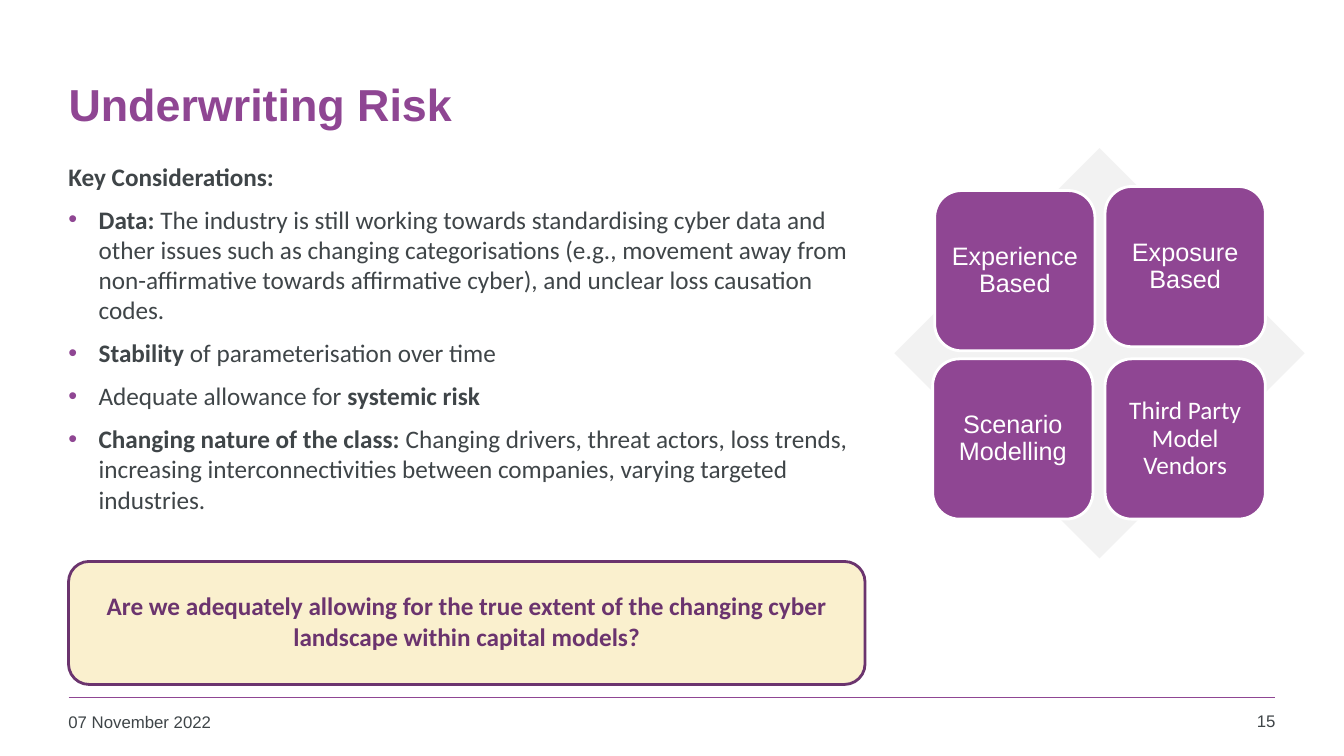
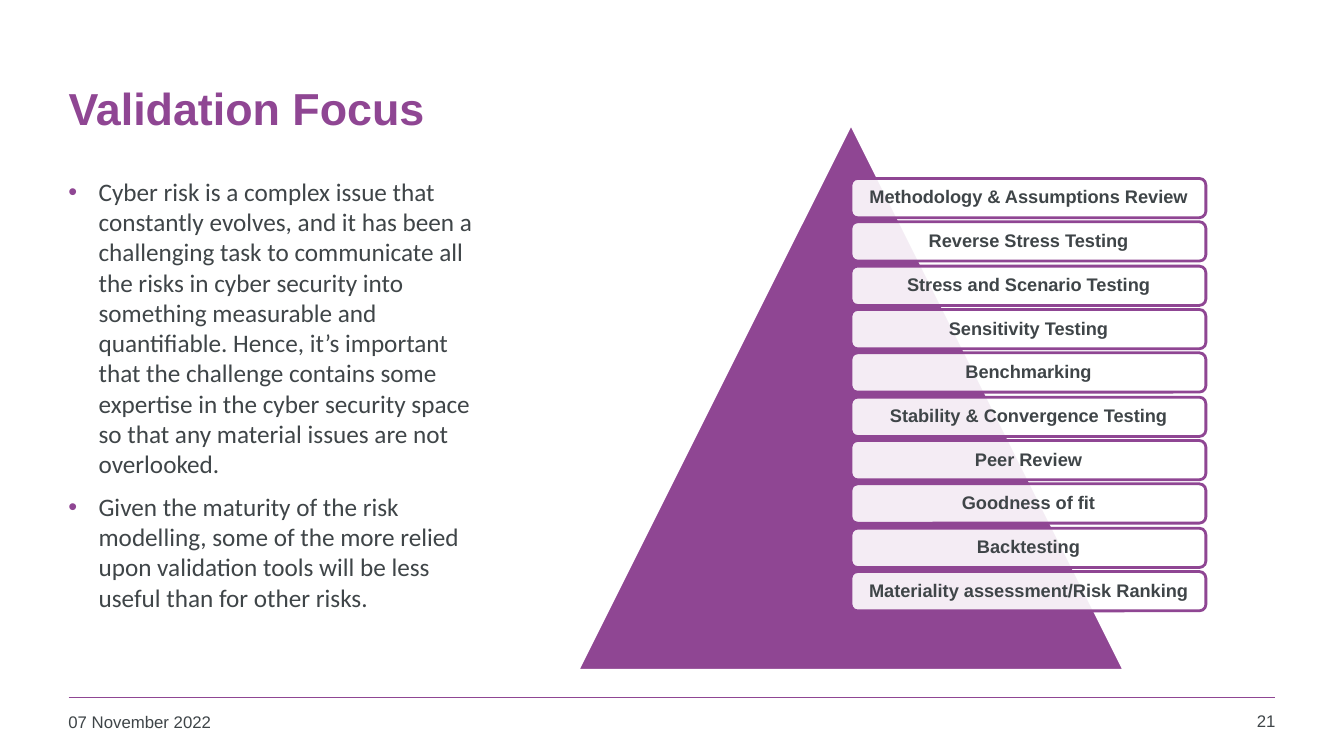
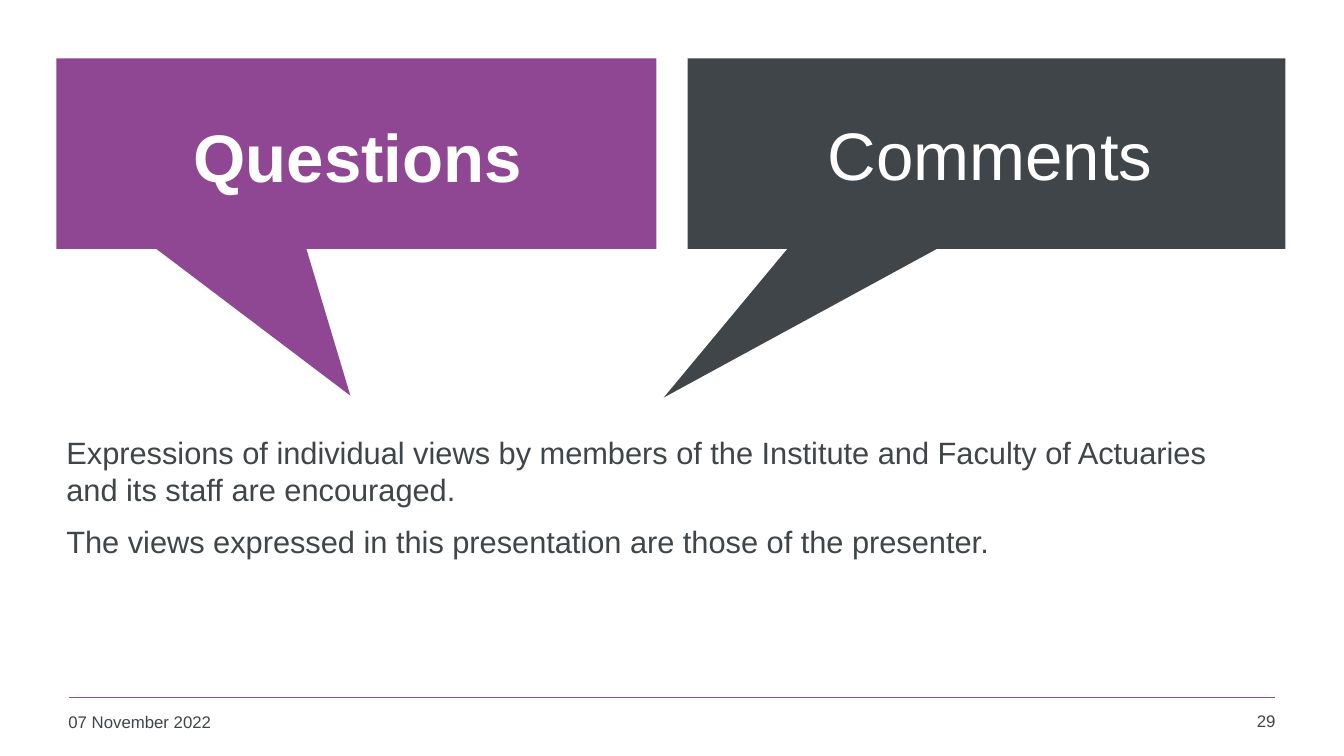
from lxml import etree
from pptx import Presentation
from pptx import util as u
from pptx.dml.color import RGBColor
from pptx.enum import shapes, text
from pptx.oxml.ns import qn

PX = 9144
PLUM = RGBColor(0x8F, 0x46, 0x93)
GRAPE = RGBColor(0x6B, 0x34, 0x6E)
SLATE = RGBColor(0x3F, 0x45, 0x48)
CREAM = RGBColor(0xFA, 0xF0, 0xCE)
PALE = RGBColor(0xF2, 0xF2, 0xF2)
WHITE = RGBColor(0xFF, 0xFF, 0xFF)

LEFT, MID, RIGHT = text.PP_ALIGN.LEFT, text.PP_ALIGN.CENTER, text.PP_ALIGN.RIGHT
TOP, CORE = text.MSO_ANCHOR.TOP, text.MSO_ANCHOR.MIDDLE
FORM = shapes.MSO_SHAPE
DATE = "07 November 2022"

HEAD = dict(size=32, color=PLUM, bold=True, anchor=CORE)
BODY = dict(size=18, name="Calibri", gap=9)
NOTE = dict(size=22, gap=11)
FOOT = dict(size=12)
TILE = dict(size=18, color=WHITE, align=MID, anchor=CORE, pad=(7, 7, 7, 7), pitch=0.9)
PILL = dict(size=13, bold=True, align=MID, anchor=CORE, pad=(5, 5, 5, 5), pitch=0.9)
ASK = dict(size=18, name="Calibri", color=GRAPE, bold=True, align=MID, anchor=CORE,
           pad=(28, 5, 28, 9))
SHOUT = dict(size=48, color=WHITE, align=MID, anchor=CORE)

POINTS = [
    "*Key Considerations:*",
    "•*Data:* The industry is still working towards standardising cyber data and other "
    "issues such as changing categorisations (e.g., movement away from non-affirmative "
    "towards affirmative cyber), and unclear loss causation codes.",
    "•*Stability* of parameterisation over time",
    "•Adequate allowance for *systemic risk*",
    "•*Changing nature of the class:* Changing drivers, threat actors, loss trends, "
    "increasing interconnectivities between companies, varying targeted industries.",
]
VIEWS = [
    "•Cyber risk is a complex issue that constantly evolves, and it has been a challenging "
    "task to communicate all the risks in cyber security into something measurable and "
    "quantifiable. Hence, it’s important that the challenge contains some expertise in the "
    "cyber security space so that any material issues are not overlooked.",
    "•Given the maturity of the risk modelling, some of the more relied upon validation "
    "tools will be less useful than for other risks.",
]
TILES = [
    (927, 189, "Experience Based", "Arial"),
    (1096, 185, "Exposure Based", "Arial"),
    (925, 356, "Scenario Modelling", "Arial"),
    (1096, 356, "Third Party Model Vendors", "Calibri"),
]
TESTS = [
    "Methodology & Assumptions Review",
    "Reverse Stress Testing",
    "Stress and Scenario Testing",
    "Sensitivity Testing",
    "Benchmarking",
    "Stability & Convergence Testing",
    "Peer Review",
    "Goodness of fit",
    "Backtesting",
    "Materiality assessment/Risk Ranking",
]
CLOSE = [
    "Expressions of individual views by members of the Institute and Faculty of Actuaries "
    "and its staff are encouraged.",
    "The views expressed in this presentation are those of the presenter.",
]


def apply(item, **vals):
    for key, val in vals.items():
        setattr(item, key, val)


def emu(box):
    return [n * PX for n in box]


def bullet(para):
    prop = para._p.get_or_add_pPr()
    prop.set("marL", str(30 * PX))
    prop.set("indent", str(-30 * PX))
    tint = etree.SubElement(prop, qn("a:buClr"))
    etree.SubElement(tint, qn("a:srgbClr")).set("val", str(PLUM))
    etree.SubElement(prop, qn("a:buFont")).set("typeface", "Arial")
    etree.SubElement(prop, qn("a:buChar")).set("char", "•")


def write(shape, paras, size, name="Arial", color=SLATE, bold=False, align=LEFT,
          anchor=TOP, pad=(10, 5, 10, 5), gap=0, pitch=1.0):
    frame = shape.text_frame
    left, top, right, base = emu(pad)
    apply(frame, word_wrap=True, auto_size=text.MSO_AUTO_SIZE.NONE,
          vertical_anchor=anchor, margin_left=left, margin_top=top,
          margin_right=right, margin_bottom=base)
    for i, line in enumerate(paras):
        para = frame.add_paragraph() if i else frame.paragraphs[0]
        if line.startswith("•"):
            bullet(para)
        apply(para, alignment=align, line_spacing=pitch,
              space_before=u.Pt(gap if i else 0))
        for j, part in enumerate(line.lstrip("•").split("*")):
            if part:
                run = para.add_run()
                run.text = part
                apply(run.font, size=u.Pt(size), name=name, bold=bold or j % 2 == 1)
                run.font.color.rgb = color


def label(slide, box, paras, style):
    shape = slide.shapes.add_textbox(*emu(box))
    write(shape, paras, **style)


def block(slide, form, box, fill, edge=None, alpha=None):
    shape = slide.shapes.add_shape(form, *emu(box))
    shape.shadow.inherit = False
    shape.fill.solid()
    shape.fill.fore_color.rgb = fill
    if alpha:
        tone = shape._element.spPr.find(qn("a:solidFill"))[0]
        etree.SubElement(tone, qn("a:alpha")).set("val", str(alpha * 1000))
    if edge is None:
        shape.line.fill.background()
    else:
        shape.line.color.rgb = edge
        shape.line.width = u.Pt(2)
    return shape


def title(slide, box, words, style):
    shape = slide.shapes.title
    apply(shape, **dict(zip(("left", "top", "width", "height"), emu(box))))
    write(shape, [words], **style)
    return shape


def start(deck, page):
    slide = deck.slides.add_slide(deck.slide_layouts[5])
    rule = slide.shapes.add_connector(shapes.MSO_CONNECTOR.STRAIGHT,
                                      *emu((68, 692, 1265, 692)))
    rule.line.color.rgb = PLUM
    rule.line.width = u.Pt(1)
    etree.SubElement(rule._element.spPr, qn("a:effectLst"))
    label(slide, (58, 701, 294, 36), [DATE], FOOT)
    label(slide, (1181, 700, 94, 37), [str(page)], dict(FOOT, align=RIGHT))
    return slide


def risk(deck):
    slide = start(deck, 15)
    title(slide, (58, 40, 1209, 125), "Underwriting Risk", HEAD)
    label(slide, (58, 155, 801, 354), POINTS, BODY)
    block(slide, FORM.DIAMOND, (887, 147, 407, 407), PALE)
    for x, y, words, name in TILES:
        tile = block(slide, FORM.ROUNDED_RECTANGLE, (x, y, 159, 159), PLUM, WHITE)
        write(tile, [words], name=name, **TILE)
    ask = block(slide, FORM.ROUNDED_RECTANGLE, (68, 557, 790, 122), CREAM, GRAPE)
    write(ask, ["Are we adequately allowing for the true extent of the changing cyber "
                "landscape within capital models?"], **ASK)


def focus(deck):
    slide = start(deck, 21)
    title(slide, (58, 44, 1209, 125), "Validation Focus", HEAD)
    label(slide, (58, 170, 436, 507), VIEWS, BODY)
    block(slide, FORM.ISOSCELES_TRIANGLE, (573, 123, 542, 542), PLUM, WHITE)
    for i, test in enumerate(TESTS):
        box = (844, 177 + round(i * 130 / 3), 352, 39)
        pill = block(slide, FORM.ROUNDED_RECTANGLE, box, WHITE, PLUM, alpha=90)
        write(pill, [test], **PILL)


def talk(deck):
    slide = start(deck, 29)
    label(slide, (56, 425, 1202, 258), CLOSE, NOTE)
    for x, wide, fill, tip in ((56, 595, PLUM, (-0.01, 1.27)),
                               (682, 593, SLATE, (-0.54, 1.28))):
        call = block(slide, FORM.RECTANGULAR_CALLOUT, (x, 58, wide, 189), fill)
        call.adjustments[0], call.adjustments[1] = tip
    write(call, ["Comments"], pad=(24, 5, 17, 5), **SHOUT)
    head = title(slide, (83, 92, 544, 125), "Questions", dict(SHOUT, bold=True))
    slide.shapes.element.append(head.element)


def main():
    deck = Presentation()
    apply(deck, slide_width=1333 * PX, slide_height=750 * PX)
    risk(deck)
    focus(deck)
    talk(deck)
    deck.save("out.pptx")


if __name__ == "__main__":
    main()
